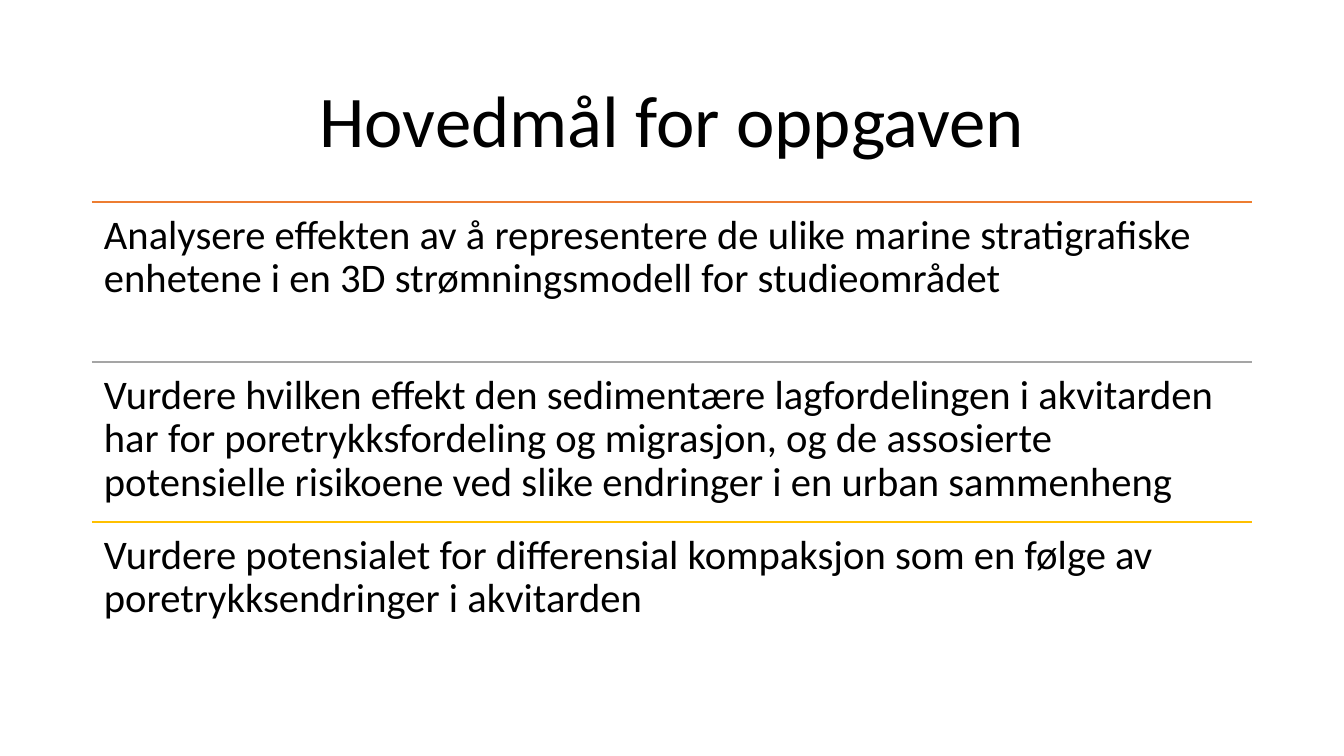
import pptx
import pptx.util
import pptx.dml.color
import pptx.enum.shapes
import pptx.enum.text
import pptx.oxml

PX = 914400 / 100.8
LEFT, WIDE = 92, 1160
TOP, STEP = 202, 160
INK = {"text": "000000", "orange": "ED7D31", "grey": "A5A5A5", "gold": "FFC000"}


def px(n):
    return pptx.util.Emu(round(n * PX))


def write(top, high, inset, words, size, align, anchor):
    box = slide.shapes.add_textbox(px(LEFT), px(top), px(WIDE), px(high))
    frame = box.text_frame
    frame.word_wrap = True
    frame.vertical_anchor = anchor
    frame.margin_left = frame.margin_right = px(inset)
    frame.margin_top = frame.margin_bottom = px(inset)
    para = frame.paragraphs[0]
    para.alignment = align
    para.line_spacing = 0.9
    run = para.add_run()
    run.text = words
    run.font.name = "Calibri"
    run.font.size = pptx.util.Pt(size)
    run.font.color.rgb = pptx.dml.color.RGBColor.from_string(INK["text"])


deck = pptx.Presentation()
deck.slide_width, deck.slide_height = px(1344), px(756)
slide = deck.slides.add_slide(deck.slide_layouts[6])
ALIGN = pptx.enum.text.PP_ALIGN
ANCHOR = pptx.enum.text.MSO_ANCHOR

# Title
write(61, 125, 5, "Hovedmål for oppgaven", 52, ALIGN.CENTER, ANCHOR.MIDDLE)

# Goals, each under a coloured rule
goals = [
    ("orange", "Analysere effekten av å representere de ulike marine stratigrafiske "
               "enhetene i en 3D strømningsmodell for studieområdet"),
    ("grey", "Vurdere hvilken effekt den sedimentære lagfordelingen i akvitarden "
             "har for poretrykksfordeling og migrasjon, og de assosierte "
             "potensielle risikoene ved slike endringer i en urban sammenheng"),
    ("gold", "Vurdere potensialet for differensial kompaksjon som en følge av "
             "poretrykksendringer i akvitarden"),
]
for i, (tone, goal) in enumerate(goals):
    top = TOP + i * STEP
    rule = slide.shapes.add_connector(
        pptx.enum.shapes.MSO_CONNECTOR.STRAIGHT,
        px(LEFT), px(top), px(LEFT + WIDE), px(top))
    rule.line.color.rgb = pptx.dml.color.RGBColor.from_string(INK[tone])
    rule.line.width = pptx.util.Pt(1)
    rule._element.spPr.append(pptx.oxml.parse_xml(
        '<a:effectLst xmlns:a="http://schemas.openxmlformats.org/drawingml/2006/main"/>'))
    write(top, STEP, 12, goal, 29, ALIGN.LEFT, ANCHOR.TOP)

deck.save("out.pptx")
